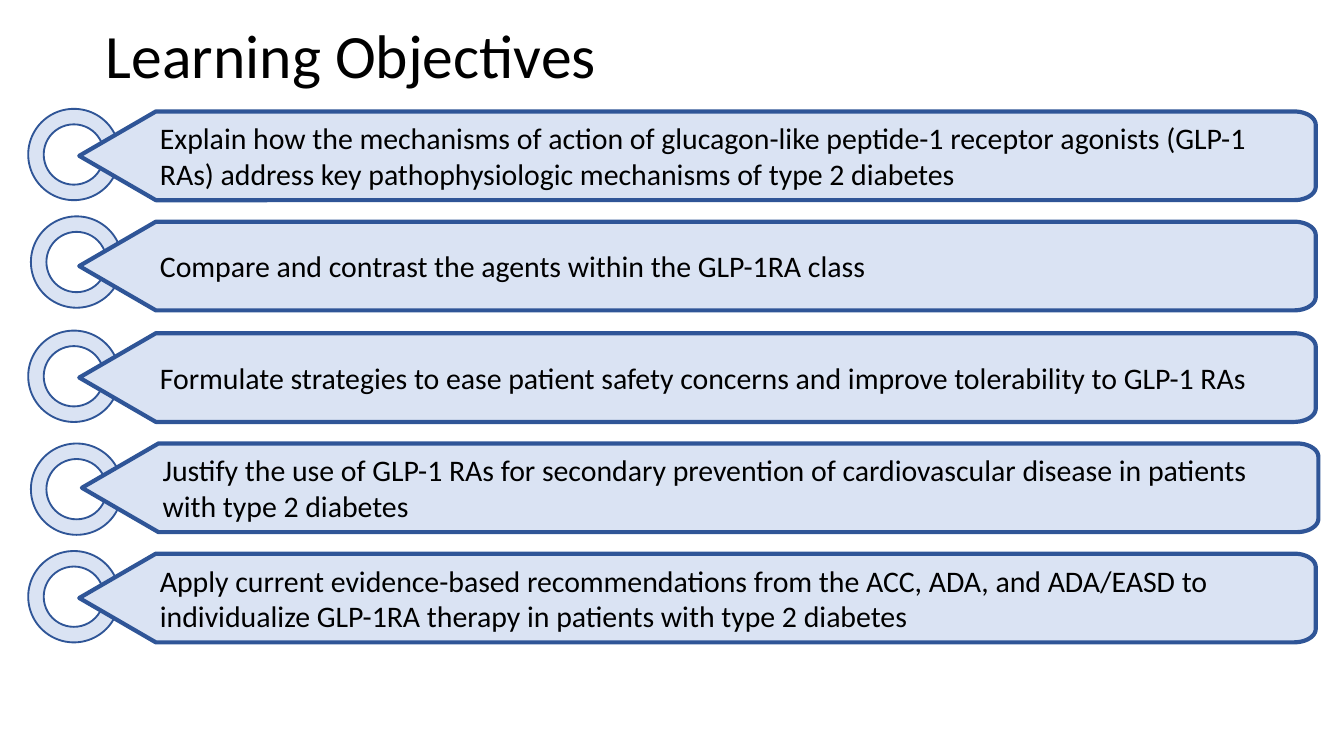
from math import cos, pi, sin

from pptx import Presentation
from pptx.dml.color import RGBColor
from pptx.enum.shapes import MSO_SHAPE as Shape
from pptx.enum.text import MSO_ANCHOR as Anchor, PP_ALIGN as Align
from pptx.util import Inches, Pt

TITLE = "Learning Objectives"

# objective, ring (left, top), banner (left, top)
OBJECTIVES = [
    ("Explain how the mechanisms of action of glucagon-like peptide-1 receptor agonists "
     "(GLP-1 RAs) address key pathophysiologic mechanisms of type 2 diabetes",
     (0.21, 0.81), (0.59, 0.83)),
    ("Compare and contrast the agents within the GLP-1RA class",
     (0.23, 1.61), (0.59, 1.65)),
    ("Formulate strategies to ease patient safety concerns and improve tolerability "
     "to GLP-1 RAs",
     (0.21, 2.46), (0.59, 2.48)),
    ("Justify the use of GLP-1 RAs for secondary prevention of cardiovascular disease "
     "in patients with type 2 diabetes",
     (0.23, 3.3), (0.61, 3.3)),
    ("Apply current evidence-based recommendations from the ACC, ADA, and ADA/EASD to "
     "individualize GLP-1RA therapy in patients with type 2 diabetes",
     (0.21, 4.1), (0.59, 4.12)),
]

THEME = {
    "font": "Calibri",
    "text": RGBColor(0x00, 0x00, 0x00),
    "fill": RGBColor(0xDA, 0xE3, 0xF3),
    "line": RGBColor(0x2F, 0x55, 0x97),
    "title_size": Pt(33),
    "body_size": Pt(16),
    "ring_line": Pt(1),
    "banner_line": Pt(2.25),
}

SLIDE_WIDTH = Inches(10)
SLIDE_HEIGHT = SLIDE_WIDTH * 9 // 16
RING_SIZE, RING_BAND = 0.68, 0.17
BANNER_WIDTH, BANNER_HEIGHT, POINT_DEPTH = 9.2, 0.66, 0.57
CORNER_X, CORNER_Y, CORNER_STEPS = 0.16, 0.1, 12


def paint(shape, line_width):
    shape.shadow.inherit = False
    shape.fill.solid()
    shape.fill.fore_color.rgb = THEME["fill"]
    shape.line.color.rgb = THEME["line"]
    shape.line.width = line_width


def write(shape, words, size, insets):
    """Fill the shape with one paragraph; insets run left, top, right, bottom."""
    frame = shape.text_frame
    frame.word_wrap = True
    frame.vertical_anchor = Anchor.MIDDLE
    (frame.margin_left, frame.margin_top,
     frame.margin_right, frame.margin_bottom) = map(Inches, insets)
    paragraph = frame.paragraphs[0]
    paragraph.alignment = Align.LEFT
    run = paragraph.add_run()
    run.text = words
    run.font.name = THEME["font"]
    run.font.size = size
    run.font.color.rgb = THEME["text"]
    return paragraph


def add_ring(slide, left, top):
    ring = slide.shapes.add_shape(Shape.DONUT, Inches(left), Inches(top),
                                  Inches(RING_SIZE), Inches(RING_SIZE))
    ring.adjustments[0] = RING_BAND
    paint(ring, THEME["ring_line"])


def add_banner(slide, left, top):
    """Draw a bar pointed on the left with rounded corners on the right."""
    right, bottom = left + BANNER_WIDTH, top + BANNER_HEIGHT
    angles = [pi / 2 * step / CORNER_STEPS for step in range(CORNER_STEPS + 1)]
    upper = [(right - CORNER_X * (1 - sin(a)), top + CORNER_Y * (1 - cos(a))) for a in angles]
    lower = [(x, top + bottom - y) for x, y in reversed(upper)]
    shoulder = left + POINT_DEPTH
    outline = [(shoulder, top), *upper, *lower, (shoulder, bottom)]

    builder = slide.shapes.build_freeform(Inches(left), Inches(top + BANNER_HEIGHT / 2))
    builder.add_line_segments([(Inches(x), Inches(y)) for x, y in outline], close=True)
    banner = builder.convert_to_shape()
    paint(banner, THEME["banner_line"])
    return banner


def main():
    deck = Presentation()
    deck.slide_width, deck.slide_height = SLIDE_WIDTH, SLIDE_HEIGHT
    slide = deck.slides.add_slide(deck.slide_layouts[6])

    heading = slide.shapes.add_textbox(Inches(0.69), Inches(0.08), Inches(8.62), Inches(0.71))
    write(heading, TITLE, THEME["title_size"], (0.1, 0.05, 0.1, 0.05)).line_spacing = 0.9

    for objective, ring_corner, banner_corner in OBJECTIVES:
        add_ring(slide, *ring_corner)
        banner = add_banner(slide, *banner_corner)
        write(banner, objective, THEME["body_size"], (0.6, 0.05, 0.19, 0.05))

    deck.save("out.pptx")


if __name__ == "__main__":
    main()
